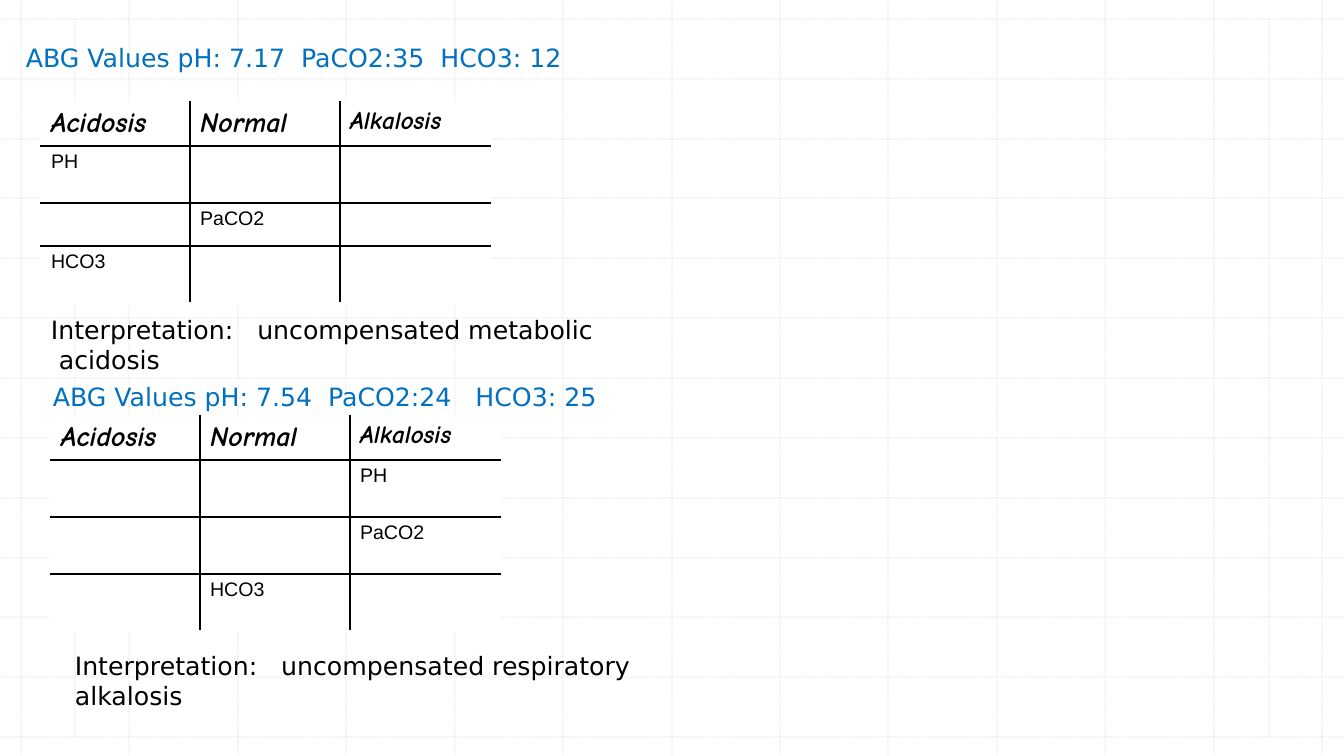
import dataclasses

import lxml.etree
import pptx
import pptx.dml.color
import pptx.enum.dml
import pptx.enum.shapes
import pptx.enum.text
import pptx.oxml.ns
import pptx.util

EMU_PER_PX = 914400 / 100.8
SLIDE_W, SLIDE_H = 1344, 756


@dataclasses.dataclass(frozen=True)
class Theme:
    paper: str = "FFFFFF"
    ink: str = "000000"
    values: str = "0070C0"
    grid: str = "BCBCBC"
    grid_alpha: int = 30000
    rule_pt: int = 1
    line_font: str = "DejaVu Sans"
    head_font: str = "Comic Neue"
    cell_font: str = "Arial"
    line_pt: int = 18
    head_pt: int = 20
    last_head_pt: int = 18
    cell_pt: int = 14


@dataclasses.dataclass(frozen=True)
class Line:
    text: str
    left: int
    top: int
    width: int
    color: str


@dataclasses.dataclass(frozen=True)
class Chart:
    left: int
    top: int
    row_heights: tuple[int, ...]
    findings: dict[str, str]


THEME = Theme()
STATES = ("Acidosis", "Normal", "Alkalosis")
COLUMN_WIDTHS = (149, 150, 150)

LINES = (
    Line("ABG Values pH: 7.17  PaCO2:35  HCO3: 12", 16, 37, 674, THEME.values),
    Line("Interpretation:   uncompensated metabolic  acidosis", 41, 309, 568, THEME.ink),
    Line("ABG Values pH: 7.54  PaCO2:24   HCO3: 25", 43, 376, 674, THEME.values),
    Line("Interpretation:   uncompensated respiratory alkalosis", 65, 645, 674, THEME.ink),
)
CHARTS = (
    Chart(41, 102, (44, 57, 43, 57),
          {"PH": "Acidosis", "PaCO2": "Normal", "HCO3": "Acidosis"}),
    Chart(51, 416, (44, 57, 57, 57),
          {"PH": "Alkalosis", "PaCO2": "Alkalosis", "HCO3": "Normal"}),
)


def px(length: float) -> pptx.util.Emu:
    return pptx.util.Emu(round(length * EMU_PER_PX))


def rgb(color: str) -> pptx.dml.color.RGBColor:
    return pptx.dml.color.RGBColor.from_string(color)


def write(frame, text: str, *, font: str, size: int, color: str,
          bold: bool = False, italic: bool = False) -> None:
    run = frame.paragraphs[0].add_run()
    run.text = text
    run.font.name = font
    run.font.size = pptx.util.Pt(size)
    run.font.bold = bold
    run.font.italic = italic
    run.font.color.rgb = rgb(color)


def child(parent, tag: str, **attributes: str):
    return lxml.etree.SubElement(parent, pptx.oxml.ns.qn(tag), attributes)


def draw_grid_line(slide, x1: int, y1: int, x2: int, y2: int) -> None:
    rule = slide.shapes.add_connector(
        pptx.enum.shapes.MSO_CONNECTOR.STRAIGHT, px(x1), px(y1), px(x2), px(y2))
    rule.line.width = pptx.util.Pt(THEME.rule_pt)
    rule.line.color.rgb = rgb(THEME.grid)
    rule.line.dash_style = pptx.enum.dml.MSO_LINE.ROUND_DOT
    properties = rule._element.spPr
    tint = properties.find(".//" + pptx.oxml.ns.qn("a:srgbClr"))
    child(tint, "a:alpha", val=str(THEME.grid_alpha))
    child(properties, "a:effectLst")


def draw_grid(slide) -> None:
    first_x, last_x, first_y, last_y, steps = 21, 1322, 19, 737, 12
    for step in range(steps + 1):
        x = round(first_x + step * (last_x - first_x) / steps)
        y = round(first_y + step * (last_y - first_y) / steps)
        draw_grid_line(slide, x, 0, x, SLIDE_H)
        draw_grid_line(slide, 0, y, SLIDE_W, y)
    for margin in (75, SLIDE_W - 75):
        draw_grid_line(slide, margin, first_y, margin, last_y)


def draw_line(slide, line: Line) -> None:
    box = slide.shapes.add_textbox(px(line.left), px(line.top), px(line.width), px(40))
    box.text_frame.word_wrap = True
    box.text_frame.auto_size = pptx.enum.text.MSO_AUTO_SIZE.SHAPE_TO_FIT_TEXT
    write(box.text_frame, line.text, font=THEME.line_font, size=THEME.line_pt,
          color=line.color)


def style_cell(cell, outer_sides: dict[str, bool]) -> None:
    properties = cell._tc.get_or_add_tcPr()
    for side, outer in outer_sides.items():
        border = child(properties, f"a:ln{side}", w=str(pptx.util.Pt(THEME.rule_pt)))
        fill = child(border, "a:solidFill")
        child(fill, "a:srgbClr", val=THEME.paper if outer else THEME.ink)
    cell.fill.solid()
    cell.fill.fore_color.rgb = rgb(THEME.paper)


def draw_chart(slide, chart: Chart) -> None:
    rows, columns = len(chart.row_heights), len(STATES)
    table = slide.shapes.add_table(
        rows, columns, px(chart.left), px(chart.top),
        px(sum(COLUMN_WIDTHS)), px(sum(chart.row_heights))).table
    table.first_row = False
    table.horz_banding = False
    for column, width in zip(table.columns, COLUMN_WIDTHS):
        column.width = px(width)
    for row, height in zip(table.rows, chart.row_heights):
        row.height = px(height)
    for r in range(rows):
        for c in range(columns):
            style_cell(table.cell(r, c), {"L": c == 0, "R": c == columns - 1,
                                          "T": r == 0, "B": r == rows - 1})
    for c, state in enumerate(STATES):
        size = THEME.last_head_pt if c == columns - 1 else THEME.head_pt
        write(table.cell(0, c).text_frame, state, font=THEME.head_font, size=size,
              color=THEME.ink, bold=True, italic=True)
    for r, (measure, state) in enumerate(chart.findings.items(), start=1):
        write(table.cell(r, STATES.index(state)).text_frame, measure,
              font=THEME.cell_font, size=THEME.cell_pt, color=THEME.ink)


def main() -> None:
    deck = pptx.Presentation()
    deck.slide_width, deck.slide_height = px(SLIDE_W), px(SLIDE_H)
    slide = deck.slides.add_slide(deck.slide_layouts[6])
    slide.background.fill.solid()
    slide.background.fill.fore_color.rgb = rgb(THEME.paper)
    draw_grid(slide)
    for line in LINES:
        draw_line(slide, line)
    for chart in CHARTS:
        draw_chart(slide, chart)
    deck.save("out.pptx")


if __name__ == "__main__":
    main()
